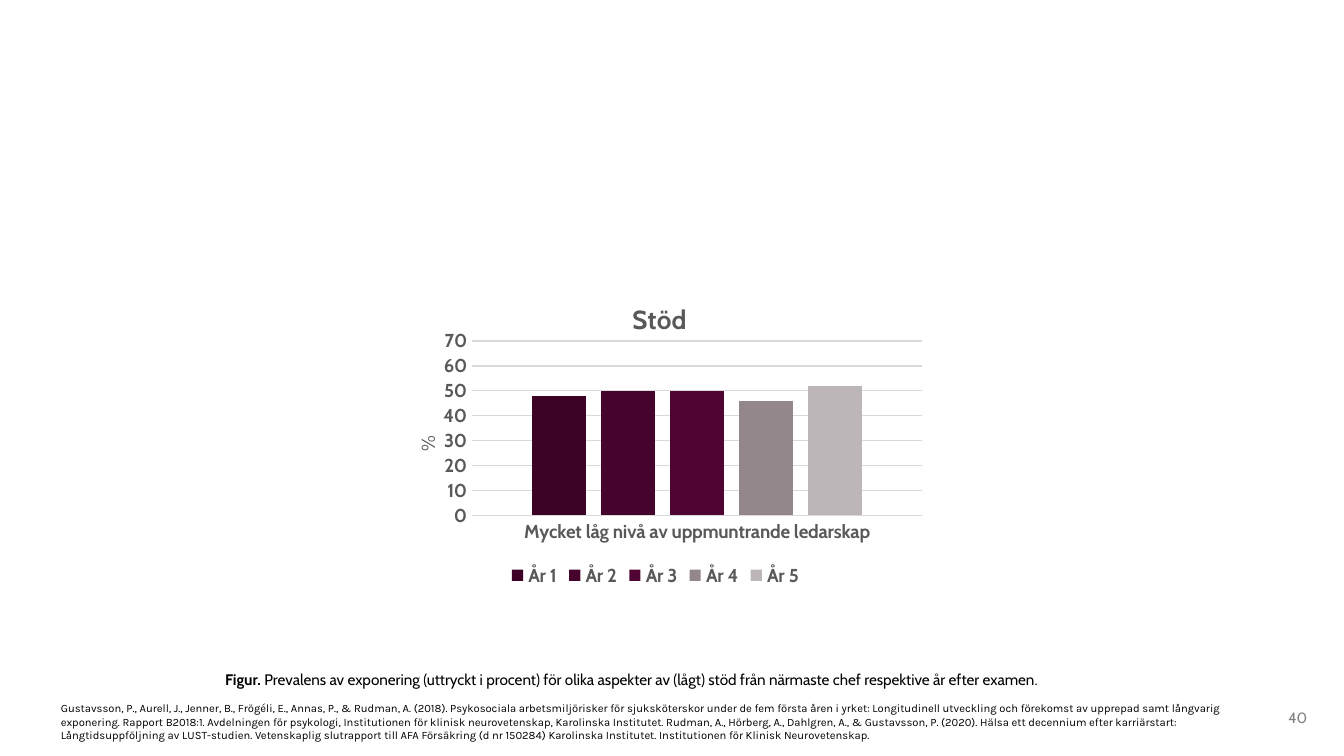
"""Build the slide on low support from the nearest manager, with a clustered column chart."""
from lxml.etree import SubElement
from pptx import Presentation
from pptx.chart.data import CategoryChartData
from pptx.dml.color import RGBColor
from pptx.enum.chart import XL_CHART_TYPE, XL_LEGEND_POSITION, XL_TICK_MARK
from pptx.enum.text import MSO_ANCHOR, PP_ALIGN
from pptx.oxml import parse_xml
from pptx.oxml.ns import nsdecls, qn
from pptx.util import Cm, Pt

COLORS = {
    "text": "000000",
    "number": "808080",
    "label": "595959",
    "grid": "D9D9D9",
}
SERIES = [
    ("År 1", 48, "3C0327"),
    ("År 2", 50, "46042D"),
    ("År 3", 50, "4F0433"),
    ("År 4", 46, "93878B"),
    ("År 5", 52, "BCB6B8"),
]
CATEGORY = "Mycket låg nivå av uppmuntrande ledarskap"
CAPTION = [
    ("Figur. ", True),
    ("Prevalens av exponering (uttryckt i procent) för olika aspekter av (lågt) stöd "
     "från närmaste chef respektive år efter examen.", False),
]
REFERENCES = (
    "Gustavsson, P., Aurell, J., Jenner, B., Frögéli, E., Annas, P., & Rudman, A. (2018). "
    "Psykosociala arbetsmiljörisker för sjuksköterskor under de fem första åren i yrket: "
    "Longitudinell utveckling och förekomst av upprepad samt långvarig exponering. "
    "Rapport B2018:1. Avdelningen för psykologi, Institutionen för klinisk neurovetenskap, "
    "Karolinska Institutet. Rudman, A., Hörberg, A., Dahlgren, A., & Gustavsson, P. (2020). "
    "Hälsa ett decennium efter karriärstart: Långtidsuppföljning av LUST-studien. "
    "Vetenskaplig slutrapport till AFA Försäkring (d nr 150284) Karolinska Institutet. "
    "Institutionen för Klinisk Neurovetenskap."
)


class SlideBuilder:
    def __init__(self, slide, font="Cabin"):
        self.slide = slide
        self.font = font

    def style(self, font, size, color, bold=False, name=None):
        font.name = name or self.font
        font.size = Pt(size)
        font.bold = bold
        font.color.rgb = RGBColor.from_string(COLORS[color])

    def place(self, shape, left, top, width, height):
        shape.left, shape.top = Cm(left), Cm(top)
        shape.width, shape.height = Cm(width), Cm(height)

    def text(self, text, box, size, color, name=None, align=PP_ALIGN.LEFT, anchor=MSO_ANCHOR.TOP):
        shape = self.slide.shapes.add_textbox(*map(Cm, box))
        frame = shape.text_frame
        frame.word_wrap = True
        frame.vertical_anchor = anchor
        frame.text = text
        paragraph = frame.paragraphs[0]
        paragraph.alignment = align
        self.style(paragraph.runs[0].font, size, color, name=name)

    def caption(self, parts, box, size):
        body = self.slide.placeholders[1]
        self.place(body, *box)
        frame = body.text_frame
        frame.vertical_anchor = MSO_ANCHOR.MIDDLE
        paragraph = frame.paragraphs[0]
        properties = paragraph._p.get_or_add_pPr()
        properties.set("marL", "0")
        properties.set("indent", "0")
        SubElement(properties, qn("a:buNone"))
        paragraph.space_before = Pt(0)
        for text, bold in parts:
            run = paragraph.add_run()
            run.text = text
            self.style(run.font, size, "text", bold)

    def layout(self, element, **fractions):
        old = element.find(qn("c:layout"))
        if old is not None:
            element.remove(old)
        inner = '<c:layoutTarget val="inner"/>' if "w" in fractions else ""
        modes = "".join(f'<c:{key}Mode val="edge"/>' for key in "xy")
        values = "".join(f'<c:{key} val="{value}"/>' for key, value in fractions.items())
        layout = parse_xml(
            f'<c:layout {nsdecls("c")}><c:manualLayout>{inner}{modes}{values}'
            "</c:manualLayout></c:layout>"
        )
        element.insert(0 if element.find(qn("c:tx")) is None else 1, layout)

    def chart_title(self, title, text, size, bold, x, y):
        title.text_frame.text = text
        self.style(title.text_frame.paragraphs[0].runs[0].font, size, "label", bold)
        self.layout(title._element, x=x, y=y)

    def grid_line(self, line):
        line.width = Pt(0.75)
        line.color.rgb = RGBColor.from_string(COLORS["grid"])

    def column_chart(self, title, unit, category, series, box):
        data = CategoryChartData()
        data.categories = [category]
        for name, value, _ in series:
            data.add_series(name, [value])
        chart = self.slide.shapes.add_chart(
            XL_CHART_TYPE.COLUMN_CLUSTERED, *map(Cm, box), data
        ).chart
        self.style(chart.font, 10, "text")
        chart.has_title = True
        self.chart_title(chart.chart_title, title, 14, True, 0.45, 0.07)
        chart.chart_title.include_in_layout = False

        plot = chart.plots[0]
        plot.gap_width, plot.overlap = 219, -27
        plot.vary_by_categories = False
        for column, (_, _, color) in zip(plot.series, series):
            column.format.fill.solid()
            column.format.fill.fore_color.rgb = RGBColor.from_string(color)

        for axis in (chart.category_axis, chart.value_axis):
            axis.major_tick_mark = axis.minor_tick_mark = XL_TICK_MARK.NONE
            self.style(axis.tick_labels.font, 10, "label", True)
        self.grid_line(chart.category_axis.format.line)
        values = chart.value_axis
        values.minimum_scale, values.maximum_scale, values.major_unit = 0, 70, 10
        values.format.line.fill.background()
        values.has_major_gridlines = True
        self.grid_line(values.major_gridlines.format.line)
        values.has_title = True
        self.chart_title(values.axis_title, unit, 10, False, 0.06, 0.5)
        values.axis_title.text_frame._txBody.bodyPr.set("rot", "-5400000")

        chart.has_legend = True
        chart.legend.position = XL_LEGEND_POSITION.BOTTOM
        chart.legend.include_in_layout = False
        self.style(chart.legend.font, 10, "label", True)
        plot_area = chart._chartSpace.chart.plotArea
        self.layout(plot_area, x=0.17, y=0.21, w=0.81, h=0.55)


def main():
    presentation = Presentation()
    presentation.slide_width, presentation.slide_height = Cm(25.4), Cm(14.28)
    slide = presentation.slides.add_slide(presentation.slide_layouts[1])
    title = slide.shapes.title._element
    title.getparent().remove(title)

    builder = SlideBuilder(slide)
    builder.text("40", (23.06, 13.31, 1.9, 0.48), 8, "number",
                 align=PP_ALIGN.RIGHT, anchor=MSO_ANCHOR.MIDDLE)
    builder.column_chart("Stöd", "%", CATEGORY, SERIES, (7.14, 5.18, 10.49, 6))
    builder.caption(CAPTION, (4, 12.55, 17.1, 0.58), 8.2)
    builder.text(REFERENCES, (0.9, 13.13, 22.8, 1.02), 6, "text", name="Karla")
    presentation.save("out.pptx")


if __name__ == "__main__":
    main()
